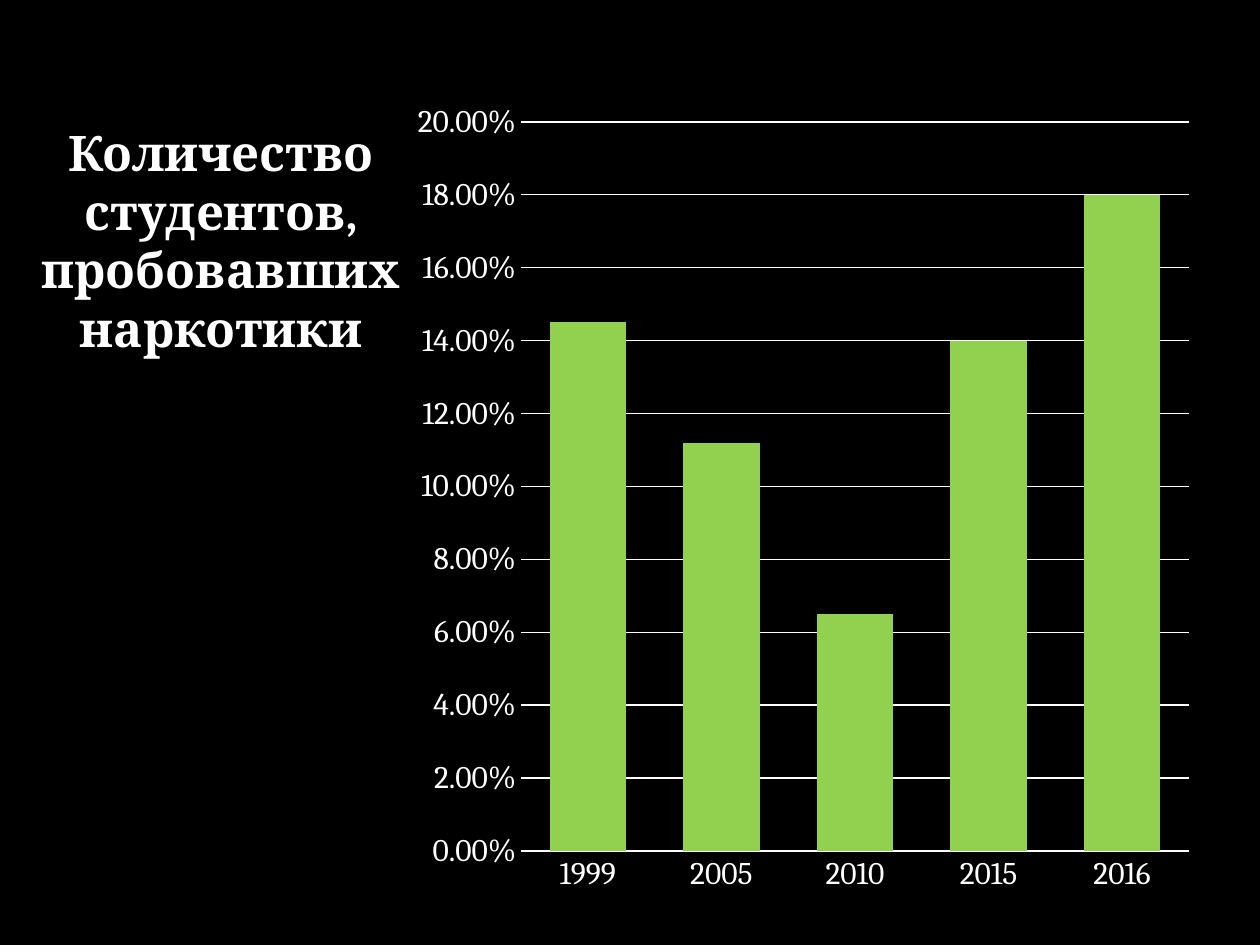
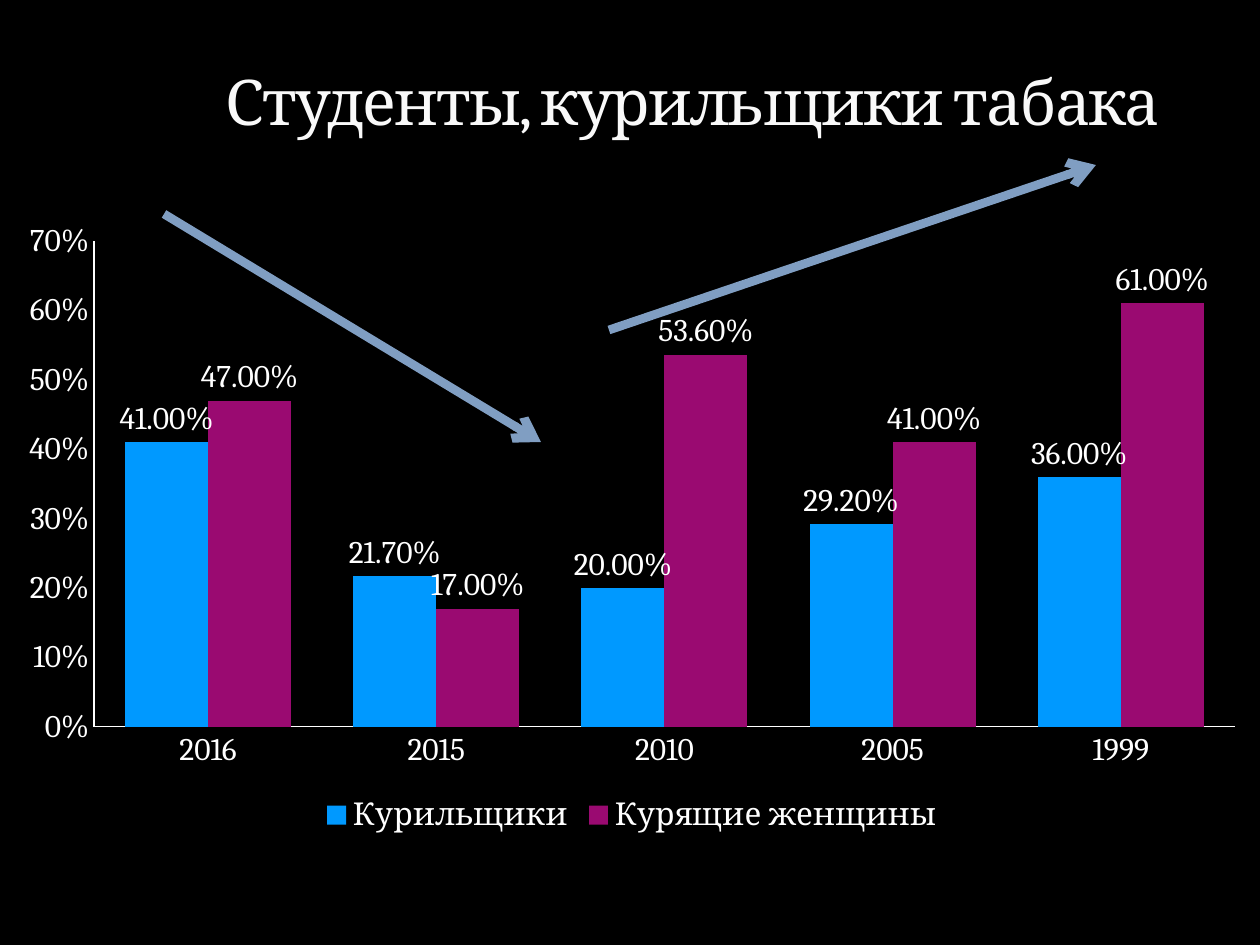
from lxml.etree import SubElement
from pptx import Presentation
from pptx.chart.data import CategoryChartData
from pptx.dml.color import RGBColor
from pptx.enum.chart import XL_CHART_TYPE, XL_LABEL_POSITION, XL_LEGEND_POSITION, XL_TICK_MARK
from pptx.enum.shapes import MSO_CONNECTOR
from pptx.enum.text import MSO_ANCHOR, MSO_AUTO_SIZE, PP_ALIGN
from pptx.oxml import parse_xml
from pptx.oxml.ns import nsdecls, qn
from pptx.util import Emu, Pt

BLACK = RGBColor(0x00, 0x00, 0x00)
WHITE = RGBColor(0xFF, 0xFF, 0xFF)
OFF_WHITE = RGBColor(0xF9, 0xF9, 0xF9)
GREEN = RGBColor(0x92, 0xD0, 0x50)
BLUE = RGBColor(0x00, 0x99, 0xFF)
PURPLE = RGBColor(0x9A, 0x0A, 0x71)
STEEL = RGBColor(0x80, 0x9E, 0xC2)
FONT = "Cambria"
PX_PER_INCH = 126
TITLE_ONLY = 5


def px(length):
    return Emu(round(length * 914400 / PX_PER_INCH))


def write_title(slide, box, wording, size, color, align, anchor, bold=False, spacing=0):
    title = slide.shapes.title
    title.left, title.top, title.width, title.height = map(px, box)
    frame = title.text_frame
    frame.word_wrap = True
    frame.auto_size = MSO_AUTO_SIZE.NONE
    frame.vertical_anchor = anchor
    paragraph = frame.paragraphs[0]
    paragraph.alignment = align
    run = paragraph.add_run()
    run.text = wording
    run.font.name = FONT
    run.font.size = Pt(size)
    run.font.bold = bold
    run.font.color.rgb = color
    if spacing:
        run.font._element.set("spc", str(spacing * 100))


def place_plot(chart, box, plot):
    left, top, width, height = box
    shares = {
        "x": (plot[0] - left) / width,
        "y": (plot[1] - top) / height,
        "w": plot[2] / width,
        "h": plot[3] / height,
    }
    modes = '<c:layoutTarget val="inner"/><c:xMode val="edge"/><c:yMode val="edge"/>'
    values = "".join(f'<c:{key} val="{share:.4f}"/>' for key, share in shares.items())
    layout = parse_xml(
        f'<c:layout {nsdecls("c")}><c:manualLayout>{modes}{values}</c:manualLayout></c:layout>'
    )
    area = chart._chartSpace.find(".//" + qn("c:plotArea"))
    for previous in area.findall(qn("c:layout")):
        area.remove(previous)
    area.insert(0, layout)


def draw_columns(slide, box, plot, years, groups, top_value, step, axis_format, overlap=0):
    data = CategoryChartData(number_format="0.00%")
    data.categories = years
    for name, shares, _ in groups:
        data.add_series(name, shares)
    chart = slide.shapes.add_chart(
        XL_CHART_TYPE.COLUMN_CLUSTERED, *map(px, box), data
    ).chart
    chart.has_title = False
    chart.has_legend = False
    chart.font.name = FONT
    chart.font.size = Pt(18)
    chart.font.color.rgb = WHITE
    place_plot(chart, box, plot)

    columns = chart.plots[0]
    columns.vary_by_categories = False
    columns.gap_width = 75
    columns.overlap = overlap
    for series, (_, _, color) in zip(columns.series, groups):
        series.format.fill.solid()
        series.format.fill.fore_color.rgb = color
        series.invert_if_negative = False

    for axis in (chart.category_axis, chart.value_axis):
        axis.major_tick_mark = XL_TICK_MARK.NONE
        axis.minor_tick_mark = XL_TICK_MARK.NONE
        axis.has_major_gridlines = False
        axis.format.line.color.rgb = WHITE
    scale = chart.value_axis
    scale.minimum_scale = 0
    scale.maximum_scale = top_value
    scale.major_unit = step
    scale.tick_labels.number_format = axis_format
    scale.tick_labels.number_format_is_linked = False
    return chart


def show_gridlines(chart):
    scale = chart.value_axis
    scale.format.line.fill.background()
    scale.has_major_gridlines = True
    scale.major_gridlines.format.line.color.rgb = WHITE


def show_values_and_legend(chart):
    columns = chart.plots[0]
    columns.has_data_labels = True
    labels = columns.data_labels
    labels.show_value = True
    labels.number_format = "0.00%"
    labels.number_format_is_linked = False
    labels.position = XL_LABEL_POSITION.OUTSIDE_END
    chart.has_legend = True
    chart.legend.position = XL_LEGEND_POSITION.BOTTOM
    chart.legend.include_in_layout = False


def draw_trend(slide, start, end):
    trend = slide.shapes.add_connector(
        MSO_CONNECTOR.STRAIGHT, *map(px, (*start, *end))
    )
    trend.line.color.rgb = STEEL
    trend.line.width = Pt(5)
    SubElement(trend.line._get_or_add_ln(), qn("a:tailEnd"), type="arrow")
    SubElement(trend._element.spPr, qn("a:effectLst"))


def build_drug_slide(slide):
    write_title(
        slide, (15, 116, 412, 251), "Количество студентов, пробовавших наркотики",
        28, WHITE, PP_ALIGN.CENTER, MSO_ANCHOR.TOP, bold=True,
    )
    chart = draw_columns(
        slide, (402, 88, 804, 822), (521, 122, 668, 729),
        ["1999", "2005", "2010", "2015", "2016"],
        [("Series 1", (0.145, 0.112, 0.065, 0.14, 0.18), GREEN)],
        0.2, 0.02, "0.00%", overlap=-25,
    )
    show_gridlines(chart)


def build_tobacco_slide(slide):
    write_title(
        slide, (213, 21, 984, 123), "Студенты, курильщики табака",
        36, OFF_WHITE, PP_ALIGN.LEFT, MSO_ANCHOR.BOTTOM, spacing=-1,
    )
    chart = draw_columns(
        slide, (4, 210, 1256, 630), (94, 241, 1141, 486),
        ["2016", "2015", "2010", "2005", "1999"],
        [
            ("Курильщики", (0.41, 0.217, 0.2, 0.292, 0.36), BLUE),
            ("Курящие женщины", (0.47, 0.17, 0.536, 0.41, 0.61), PURPLE),
        ],
        0.7, 0.1, "0%",
    )
    show_values_and_legend(chart)
    draw_trend(slide, (164, 214), (541, 442))
    draw_trend(slide, (609, 330), (1096, 165))


def main():
    deck = Presentation()
    deck.slide_width, deck.slide_height = px(1260), px(945)
    backdrop = deck.slide_master.background.fill
    backdrop.solid()
    backdrop.fore_color.rgb = BLACK
    for build in (build_drug_slide, build_tobacco_slide):
        build(deck.slides.add_slide(deck.slide_layouts[TITLE_ONLY]))
    deck.save("out.pptx")


if __name__ == "__main__":
    main()
